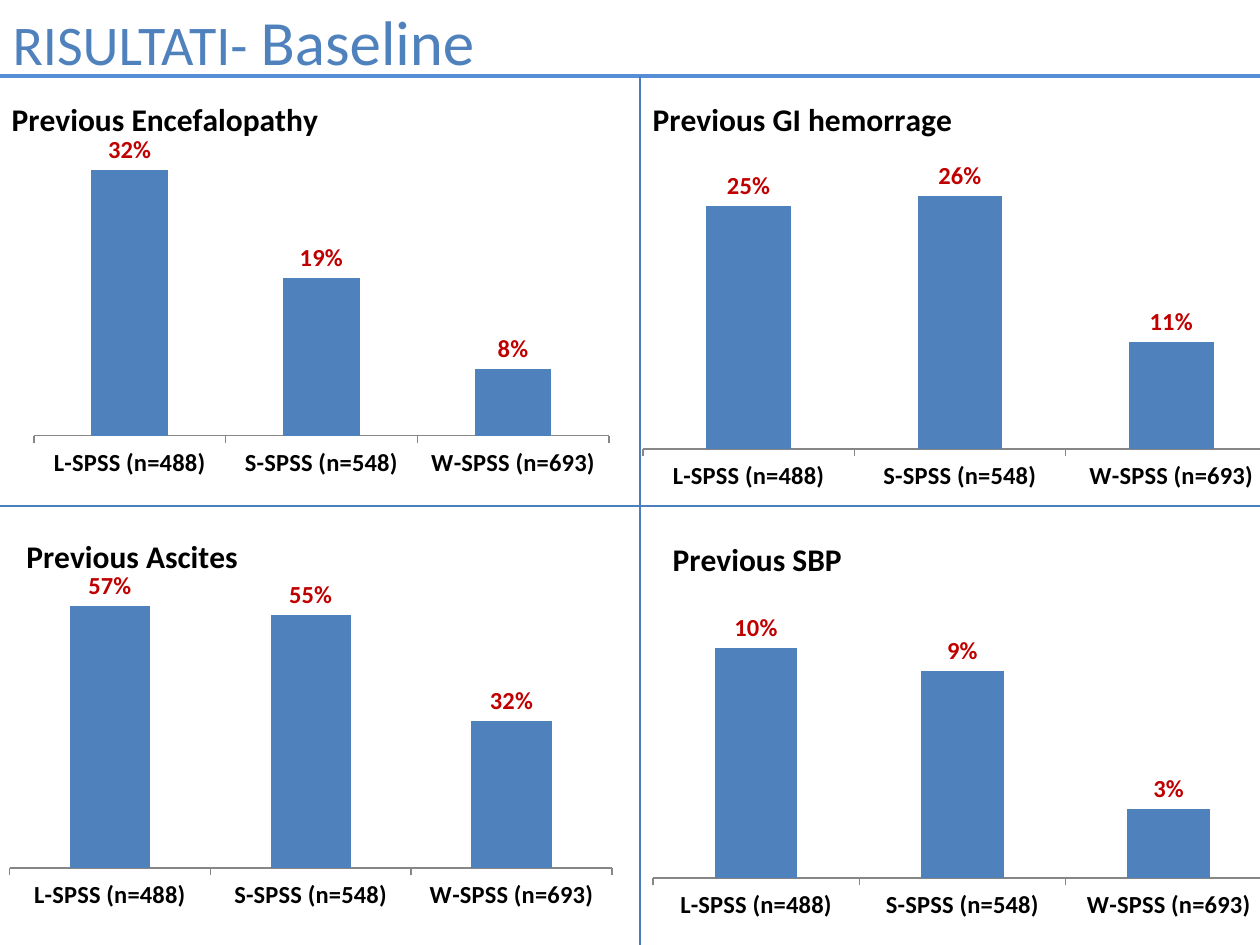
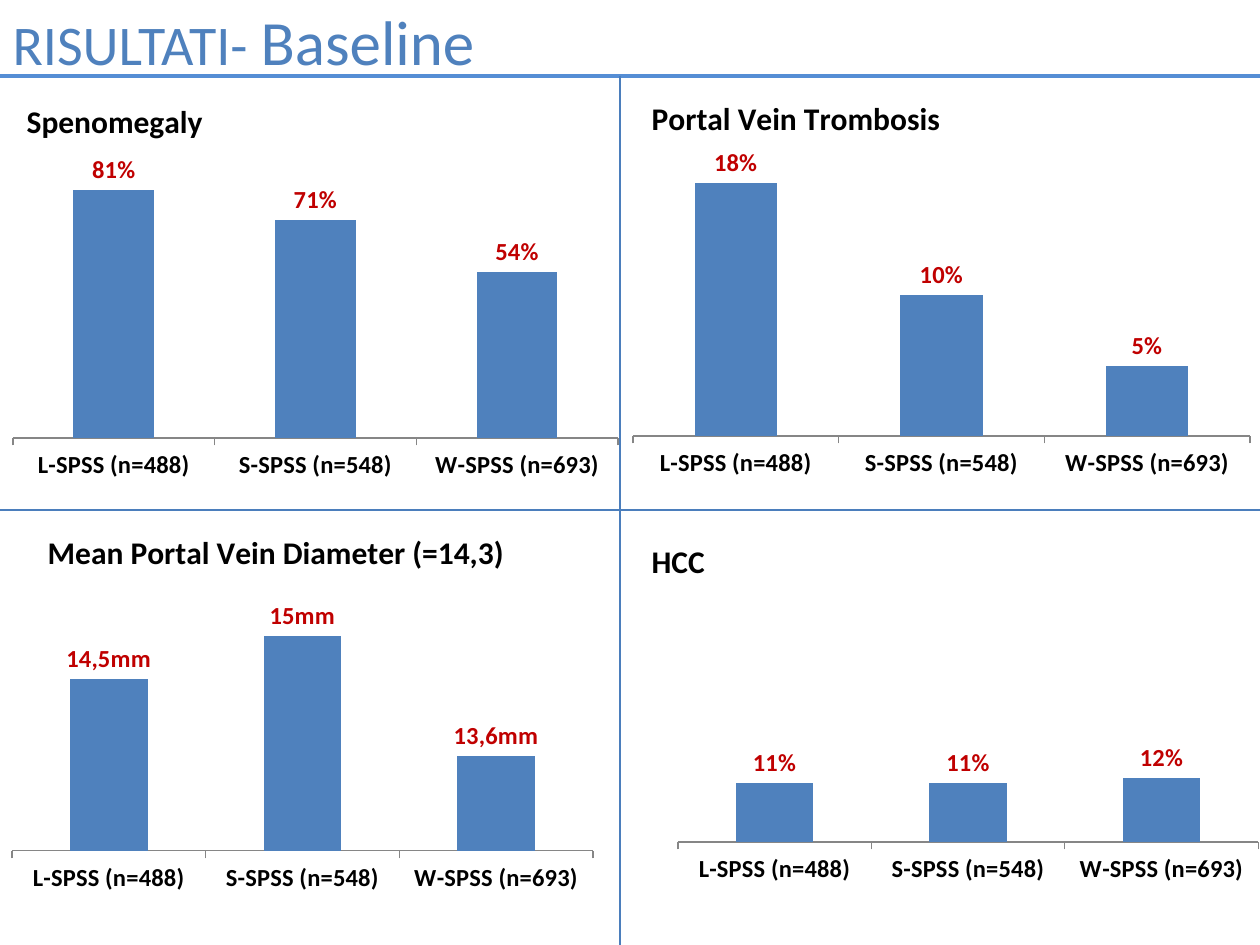
from lxml import etree
from pptx import Presentation
from pptx.chart.data import CategoryChartData
from pptx.dml.color import RGBColor
from pptx.enum.chart import XL_CHART_TYPE as CT, XL_LABEL_POSITION as LP, XL_TICK_LABEL_POSITION as TLP, XL_TICK_MARK as TM
from pptx.enum.shapes import MSO_CONNECTOR as MC
from pptx.enum.text import MSO_ANCHOR, MSO_AUTO_SIZE, PP_ALIGN
from pptx.oxml.ns import qn
from pptx.util import Pt

PX = 914400 / 126
W, H = 1260, 945
RULE_Y = 76
FONT = "Calibri"
COLORS = {"blue": "4F81BD", "rule": "558ED5", "divider": "4B7EBC",
          "label": "C00000", "text": "000000", "axis": "868686"}
GROUPS = ["L-SPSS (n=488)", "S-SPSS (n=548)", "W-SPSS (n=693)"]
HEADING = [("RISULTATI- ", 32), ("Baseline", 36)]

# frame: left, top, width, height; head: left, top; plot: left, top, right, bottom
SLIDES = [
    {"cross": (640, 506), "charts": [
        dict(title="Previous Encefalopathy", values=[32, 19, 8], limits=(0, 35),
             frame=(-11, 86, 640, 397), head=(6, 92), plot=(34, 145, 609, 436)),
        dict(title="Previous Ascites", values=[57, 55, 32], limits=(0, 60),
             frame=(9, 522, 641, 407), head=(20, 529), plot=(9, 592, 612, 868)),
        dict(title="Previous GI hemorrage", values=[25, 26, 11], limits=(0, 30),
             frame=(630, 83, 660, 417), head=(647, 92), plot=(643, 157, 1277, 449)),
        dict(title="Previous SBP", values=[10, 9, 3], limits=(0, 12),
             frame=(640, 522, 645, 407), head=(667, 532), plot=(653, 602, 1272, 878)),
    ]},
    {"cross": (620, 510), "charts": [
        dict(title="Spenomegaly", values=[81, 71, 54], limits=(0, 90),
             frame=(0, 82, 630, 407), head=(21, 94), plot=(13, 162, 618, 438)),
        dict(title="Portal Vein Trombosis", values=[18, 10, 5], limits=(0, 20),
             frame=(620, 81, 644, 407), head=(646, 91), plot=(633, 155, 1250, 436)),
        dict(title="Mean Portal Vein Diameter (=14,3)", values=[14.5, 15, 13.6],
             limits=(12.5, 15.5), unit="mm",
             frame=(0, 514, 605, 387), head=(42, 525), plot=(12, 593, 593, 851)),
        dict(title="HCC", values=[11, 11, 12], limits=(0, 50),
             frame=(639, 514, 620, 398), head=(646, 534), plot=(678, 574, 1259, 842)),
    ]},
]


def emu(*lengths):
    return [round(n * PX) for n in lengths]


def rgb(name):
    return RGBColor.from_string(COLORS[name])


class Deck:
    """Holds the shared style and draws on the current slide."""

    def __init__(self):
        self.prs = Presentation()
        self.prs.slide_width, self.prs.slide_height = emu(W, H)

    def new_slide(self):
        self.s = self.prs.slides.add_slide(self.prs.slide_layouts[5])

    def style(self, font, size, color, bold=False):
        font.name, font.size, font.bold = FONT, Pt(size), bold
        font.color.rgb = rgb(color)

    def line(self, x1, y1, x2, y2, color, width):
        cn = self.s.shapes.add_connector(MC.STRAIGHT, *emu(x1, y1, x2, y2))
        cn.line.color.rgb = rgb(color)
        cn.line.width = Pt(width)
        etree.SubElement(cn.element.spPr, qn("a:effectLst"))

    def title(self, runs):
        sp = self.s.shapes.title
        sp.left, sp.top, sp.width, sp.height = emu(0, -4, W, 89)
        tf = sp.text_frame
        tf.word_wrap = True
        tf.auto_size = MSO_AUTO_SIZE.SHAPE_TO_FIT_TEXT
        tf.vertical_anchor = MSO_ANCHOR.TOP
        p = tf.paragraphs[0]
        p.alignment = PP_ALIGN.LEFT
        for text, size in runs:
            r = p.add_run()
            r.text = text
            self.style(r.font, size, "blue")

    def layout(self, parent, index, frame, box, inner=False):
        left, top, width, height = frame
        for old in parent.findall(qn("c:layout")):
            parent.remove(old)
        layout = etree.Element(qn("c:layout"))
        parent.insert(index, layout)
        manual = etree.SubElement(layout, qn("c:manualLayout"))
        items = [("xMode", "edge"), ("yMode", "edge"),
                 ("x", (box[0] - left) / width), ("y", (box[1] - top) / height)]
        if inner:
            items = [("layoutTarget", "inner"), *items,
                     ("w", (box[2] - box[0]) / width), ("h", (box[3] - box[1]) / height)]
        for tag, value in items:
            etree.SubElement(manual, qn("c:" + tag)).set("val", str(value))

    def chart(self, title, values, limits, frame, head, plot, unit="%"):
        data = CategoryChartData()
        data.categories = GROUPS
        data.add_series(title, values)
        chart = self.s.shapes.add_chart(CT.COLUMN_CLUSTERED, *emu(*frame), data).chart
        self.style(chart.font, 10, "text")
        chart.has_legend = False
        self.axes(chart, limits)
        self.columns(chart.plots[0], values, unit)

        chart.has_title = True
        r = chart.chart_title.text_frame.paragraphs[0].add_run()
        r.text = title
        self.style(r.font, 18, "text", True)
        root = chart.element
        self.layout(root.find(".//" + qn("c:title")), 1, frame, head)
        self.layout(root.find(".//" + qn("c:plotArea")), 0, frame, plot, True)

    def axes(self, chart, limits):
        cat, val = chart.category_axis, chart.value_axis
        cat.major_tick_mark, cat.minor_tick_mark = TM.OUTSIDE, TM.NONE
        cat.tick_label_position = TLP.NEXT_TO_AXIS
        cat.format.line.color.rgb = rgb("axis")
        cat.format.line.width = Pt(0.75)
        self.style(cat.tick_labels.font, 14, "text", True)
        val.minimum_scale, val.maximum_scale = limits
        val.has_major_gridlines = False
        val.visible = False

    def columns(self, plot, values, unit):
        plot.gap_width = 150
        plot.vary_by_categories = False
        series = plot.series[0]
        series.format.fill.solid()
        series.format.fill.fore_color.rgb = rgb("blue")
        labels = series.data_labels
        labels.show_value = True
        labels.position = LP.OUTSIDE_END
        self.style(labels.font, 14, "label", True)
        for i, value in enumerate(values):
            label = series.points[i].data_label
            r = label.text_frame.paragraphs[0].add_run()
            r.text = f"{value}{unit}".replace(".", ",")
            self.style(r.font, 14, "label", True)
            label.position = LP.OUTSIDE_END


def main():
    deck = Deck()
    for slide in SLIDES:
        deck.new_slide()
        deck.line(0, RULE_Y, W, RULE_Y, "rule", 2)
        deck.title(HEADING)
        for chart in slide["charts"]:
            deck.chart(**chart)
        x, y = slide["cross"]
        deck.line(x, RULE_Y, x, H, "divider", 0.75)
        deck.line(0, y, W, y, "divider", 0.75)
    deck.prs.save("out.pptx")


if __name__ == "__main__":
    main()
